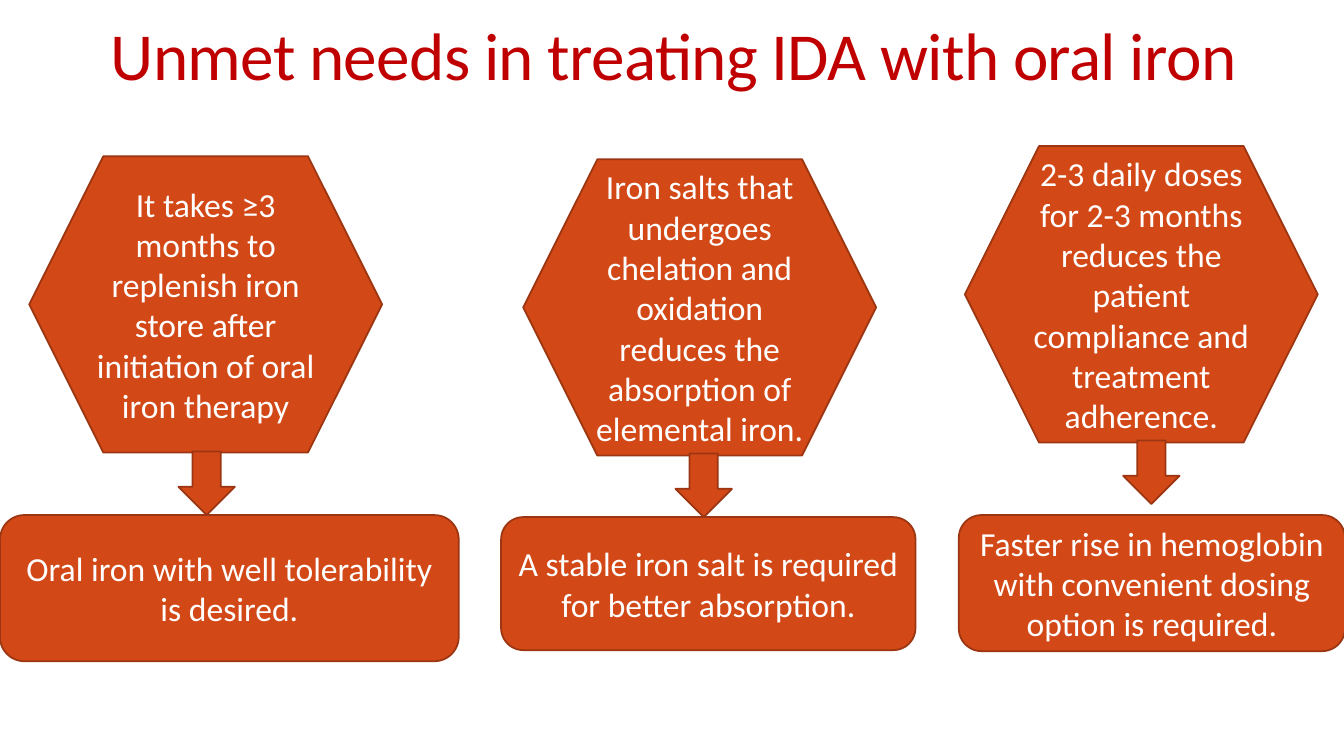
from pptx import Presentation
from pptx.dml.color import RGBColor
from pptx.enum.shapes import MSO_SHAPE
from pptx.enum.text import MSO_ANCHOR, PP_ALIGN
from pptx.util import Inches, Pt

ORANGE = RGBColor(0xD3, 0x48, 0x17)
BROWN = RGBColor(0x9C, 0x35, 0x11)
WHITE = RGBColor(0xFF, 0xFF, 0xFF)
RED = RGBColor(0xC0, 0x00, 0x00)
FONT = "Calibri"

HEXAGON_SIZE = (3.5, 2.94)
ARROW_SIZE = (0.56, 0.63)

# Each column: hexagon corner, problem, arrow corner, need box, need
COLUMNS = [
    ((0.29, 1.55),
     "It takes ≥3 months to replenish iron store after initiation of oral iron therapy",
     (1.77, 4.48), (0, 5.11, 4.55, 1.45),
     "Oral iron with well tolerability is desired."),
    ((5.19, 1.58),
     "Iron salts that undergoes chelation and oxidation reduces the absorption of elemental iron.",
     (6.7, 4.5), (4.97, 5.13, 4.11, 1.32),
     "A stable iron salt is required for better absorption."),
    ((9.57, 1.45),
     "2-3 daily doses for 2-3 months reduces the patient compliance and treatment adherence.",
     (11.14, 4.37), (9.51, 5.11, 3.83, 1.35),
     "Faster rise in hemoglobin with convenient dosing option is required."),
]


def format_text(text_frame, text, size, color, anchor):
    text_frame.word_wrap = True
    text_frame.vertical_anchor = anchor
    text_frame.text = text
    paragraph = text_frame.paragraphs[0]
    run = paragraph.runs[0]
    run.font.name = FONT
    run.font.size = Pt(size)
    run.font.color.rgb = color
    return paragraph


def add_title(slide, box, text):
    text_box = slide.shapes.add_textbox(*map(Inches, box))
    paragraph = format_text(text_box.text_frame, text, 48, RED, MSO_ANCHOR.BOTTOM)
    paragraph.line_spacing = 0.85
    # Tighten the letter spacing by half a point
    paragraph.runs[0].font._element.set("spc", "-50")


def add_block(slide, preset, box, text=None):
    shape = slide.shapes.add_shape(preset, *map(Inches, box))
    shape.shadow.inherit = False
    shape.fill.solid()
    shape.fill.fore_color.rgb = ORANGE
    shape.line.color.rgb = BROWN
    shape.line.width = Pt(1.25)
    if text:
        paragraph = format_text(shape.text_frame, text, 24, WHITE, MSO_ANCHOR.MIDDLE)
        paragraph.alignment = PP_ALIGN.CENTER


def add_column(slide, hexagon_corner, problem, arrow_corner, need_box, need):
    add_block(slide, MSO_SHAPE.HEXAGON, hexagon_corner + HEXAGON_SIZE, problem)
    add_block(slide, MSO_SHAPE.DOWN_ARROW, arrow_corner + ARROW_SIZE)
    add_block(slide, MSO_SHAPE.ROUNDED_RECTANGLE, need_box, need)


def main():
    presentation = Presentation()
    presentation.slide_width = Inches(13.33)
    presentation.slide_height = Inches(7.5)
    slide = presentation.slides.add_slide(presentation.slide_layouts[6])

    add_title(slide, (1, -0.01, 12.05, 0.99), "Unmet needs in treating IDA with oral iron")
    for column in COLUMNS:
        add_column(slide, *column)

    presentation.save("out.pptx")


if __name__ == "__main__":
    main()
